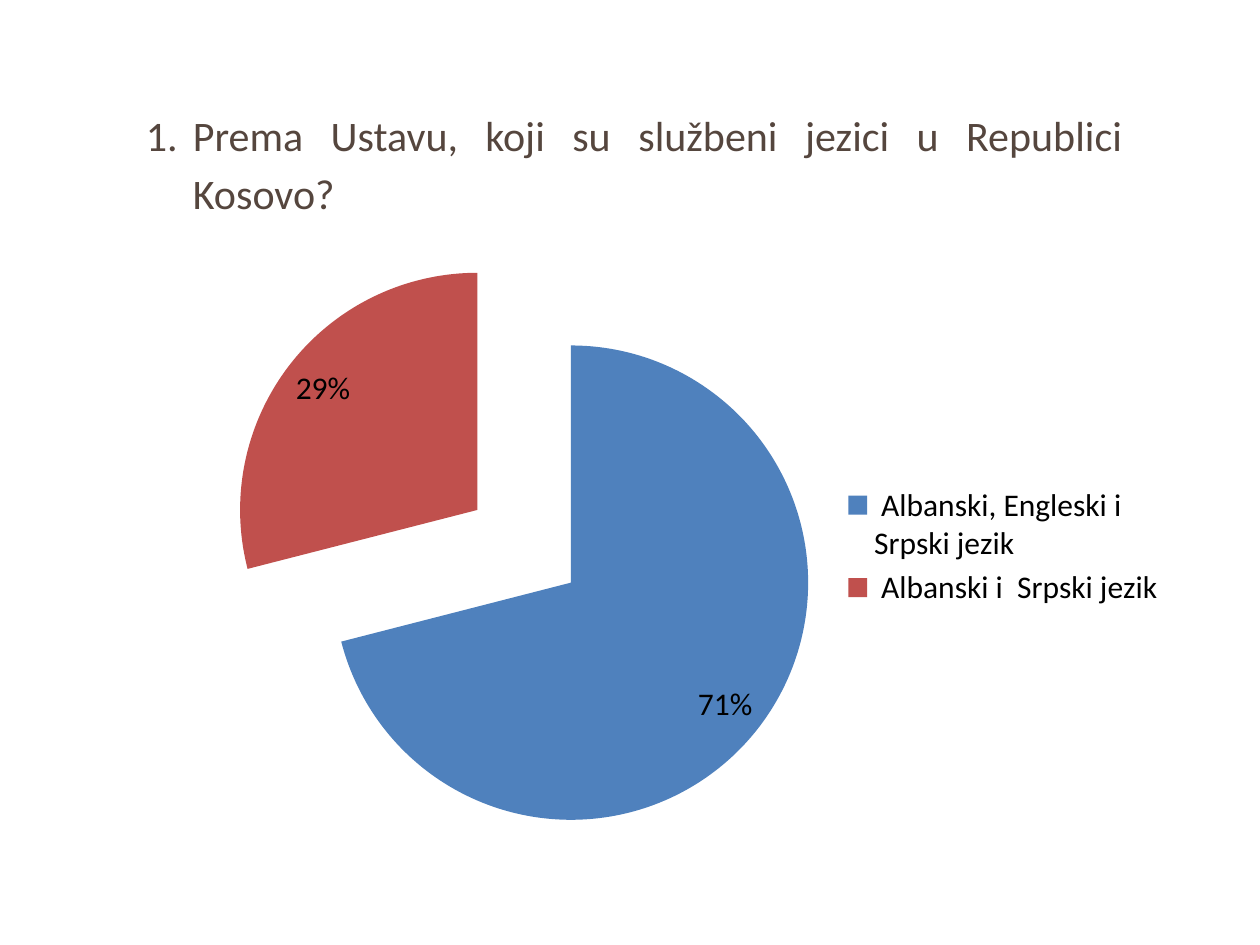
from dataclasses import dataclass

from lxml import etree
from pptx import Presentation
from pptx.chart.data import CategoryChartData
from pptx.dml.color import RGBColor
from pptx.enum.chart import XL_CHART_TYPE, XL_LABEL_POSITION, XL_LEGEND_POSITION
from pptx.enum.text import MSO_AUTO_SIZE, PP_ALIGN
from pptx.oxml.ns import qn
from pptx.slide import Slide
from pptx.util import Cm, Pt

PIE = XL_CHART_TYPE.PIE
LABEL_INSIDE_END = XL_LABEL_POSITION.INSIDE_END
LEGEND_RIGHT = XL_LEGEND_POSITION.RIGHT
FIT_SHAPE = MSO_AUTO_SIZE.SHAPE_TO_FIT_TEXT
JUSTIFY = PP_ALIGN.JUSTIFY

FONT = "Calibri"
COLORS = {
    "question": "55463E",
    "label": "000000",
    "blue": "4F81BD",
    "red": "C0504D",
}


@dataclass
class Answer:
    text: str
    percent: int
    color: str


ANSWERS = [
    Answer(" Albanski, Engleski i Srpski jezik ", 71, "blue"),
    Answer(" Albanski i  Srpski jezik ", 29, "red"),
]


def color(name: str) -> RGBColor:
    return RGBColor.from_string(COLORS[name])


def add_answer_chart(slide: Slide, answers: list[Answer], explosion: int) -> None:
    chart_data = CategoryChartData()
    chart_data.categories = [answer.text for answer in answers]
    chart_data.add_series("Series 1", [answer.percent for answer in answers])
    chart = slide.shapes.add_chart(
        PIE, Cm(4.24), Cm(3.89), Cm(19.66), Cm(14.25), chart_data
    ).chart
    chart.has_title = False
    chart.font.name = FONT
    chart.font.size = Pt(18)
    chart.font.color.rgb = color("label")

    chart.has_legend = True
    chart.legend.position = LEGEND_RIGHT
    chart.legend.include_in_layout = False

    plot = chart.plots[0]
    plot.vary_by_categories = True
    plot.has_data_labels = True
    labels = plot.data_labels
    labels.show_percentage = True
    labels.show_value = False
    labels.number_format = "0%"
    labels.number_format_is_linked = False
    labels.position = LABEL_INSIDE_END

    series = plot.series[0]
    for index, answer in enumerate(answers):
        fill = series.points[index].format.fill
        fill.solid()
        fill.fore_color.rgb = color(answer.color)
    explosion_element = etree.Element(qn("c:explosion"), val=str(explosion))
    series._element.find(qn("c:tx")).addnext(explosion_element)


def add_question(slide: Slide, text: str) -> None:
    text_box = slide.shapes.add_textbox(Cm(2.69), Cm(1.93), Cm(20.19), Cm(2.62))
    text_frame = text_box.text_frame
    text_frame.word_wrap = True
    text_frame.auto_size = FIT_SHAPE
    text_frame.text = text

    paragraph = text_frame.paragraphs[0]
    paragraph.alignment = JUSTIFY
    paragraph.line_spacing = 1.15
    paragraph.space_after = Pt(15)
    properties = paragraph._p.get_or_add_pPr()
    properties.set("marL", str(Cm(0.95)))
    properties.set("indent", str(-Cm(0.95)))
    etree.SubElement(properties, qn("a:buFont"), typeface="+mj-lt")
    etree.SubElement(properties, qn("a:buAutoNum"), type="arabicPeriod")

    font = paragraph.runs[0].font
    font.name = FONT
    font.size = Pt(24)
    font.color.rgb = color("question")


def main() -> None:
    presentation = Presentation()
    presentation.slide_width = Cm(25.4)
    presentation.slide_height = Cm(19.05)
    slide = presentation.slides.add_slide(presentation.slide_layouts[6])
    add_answer_chart(slide, ANSWERS, explosion=25)
    add_question(slide, "Prema Ustavu, koji su službeni jezici u Republici Kosovo? ")
    presentation.save("out.pptx")


if __name__ == "__main__":
    main()
